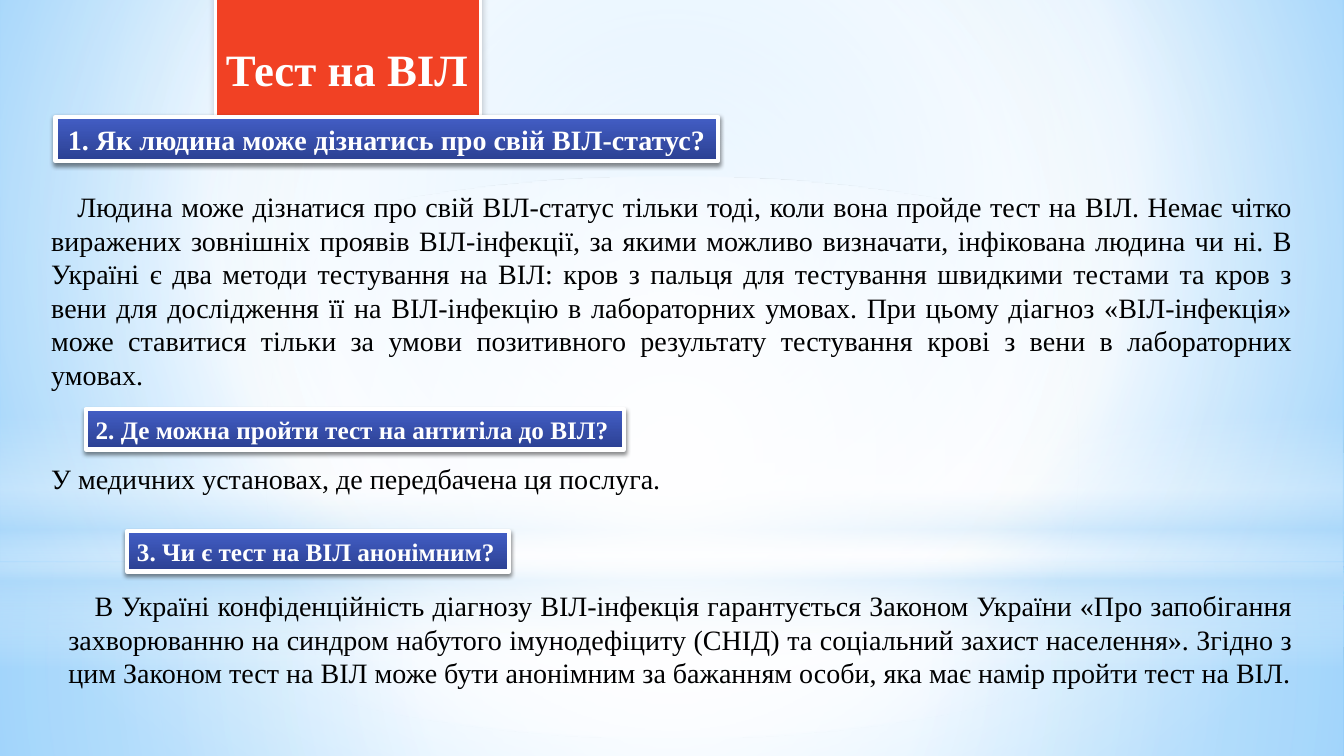
from lxml import etree
from pptx import Presentation
from pptx.dml.color import RGBColor
from pptx.enum.shapes import MSO_SHAPE
from pptx.enum.text import MSO_ANCHOR, MSO_AUTO_SIZE, PP_ALIGN
from pptx.oxml.ns import qn
from pptx.util import Inches, Pt

RECT, OVAL = MSO_SHAPE.RECTANGLE, MSO_SHAPE.OVAL
LEFT, CENTER, JUSTIFY = PP_ALIGN.LEFT, PP_ALIGN.CENTER, PP_ALIGN.JUSTIFY
FIT, MIDDLE, TOP = MSO_AUTO_SIZE.SHAPE_TO_FIT_TEXT, MSO_ANCHOR.MIDDLE, MSO_ANCHOR.TOP
TITLE_ONLY = 5
FONT = "Times New Roman"
COLORS = {
    "white": "FFFFFF", "black": "000000", "red": "F14124",
    "navy_top": "435EC5", "navy_bottom": "2B4092",
    "sky": "9ED5FF", "azure": "5BB9FF", "mist": "B4DCFA",
}


def fill_gradient(fill, element, stops, focus=None):
    """Fill with (position, color, opacity) stops: around focus, or top to bottom."""
    fill.gradient()
    gradient = element.find(".//" + qn("a:gradFill"))
    for child in list(gradient):
        gradient.remove(child)
    stop_list = etree.SubElement(gradient, qn("a:gsLst"))
    for position, color, opacity in stops:
        stop = etree.SubElement(stop_list, qn("a:gs"), pos=str(position * 1000))
        tone = etree.SubElement(stop, qn("a:srgbClr"), val=COLORS[color])
        if opacity < 100:
            etree.SubElement(tone, qn("a:alpha"), val=str(opacity * 1000))
    if focus:
        circle = etree.SubElement(gradient, qn("a:path"), path="circle")
        sides = {side: str(share * 1000) for side, share in zip("ltrb", focus)}
        etree.SubElement(circle, qn("a:fillToRect"), **sides)
    else:
        etree.SubElement(gradient, qn("a:lin"), ang="5400000", scaled="0")


def write(box, text, size=20, color="black", bold=False, align=LEFT,
          anchor=TOP, wrap=True, indent=0):
    frame = box.text_frame
    frame.word_wrap = wrap
    frame.auto_size = FIT
    frame.vertical_anchor = anchor
    para = frame.paragraphs[0]
    para.alignment = align
    if indent:
        para._p.get_or_add_pPr().set("indent", str(Inches(indent)))
    span = para.add_run()
    span.text = text
    span.font.name = FONT
    span.font.size = Pt(size)
    span.font.bold = bold
    span.font.color.rgb = RGBColor.from_string(COLORS[color])


deck = Presentation()
deck.slide_width, deck.slide_height = Inches(13.33), Inches(7.5)
page = deck.slides.add_slide(deck.slide_layouts[TITLE_ONLY])

# Background and its soft light bands
fill_gradient(page.background.fill, page.element,
              [(0, "sky", 100), (60, "white", 100), (100, "azure", 100)],
              focus=(20, 10, 20, 60))
middle = (50, 50, 50, 50)
bands = [
    (RECT, 5.58, 1.92, middle,
     [(0, "white", 91), (37, "white", 76), (100, "mist", 79)]),
    (RECT, 0, 5.58, middle,
     [(0, "white", 89), (48, "white", 62), (100, "mist", 79)]),
    (RECT, 4.12, 2.5, None,
     [(0, "white", 0), (29, "white", 30), (45, "mist", 40),
      (55, "white", 26), (65, "mist", 60), (100, "white", 0)]),
    (OVAL, 1.75, 5.58, middle, [(0, "white", 100), (56, "white", 0)]),
]
for kind, top, height, focus, stops in bands:
    band = page.shapes.add_shape(kind, 0, Inches(top), deck.slide_width, Inches(height))
    band.shadow.inherit = False
    band.line.fill.background()
    fill_gradient(band.fill, band.element, stops, focus)

# Title and question labels: place, size, alignment, border, shadow
title = page.shapes.title
title.element.getparent().append(title.element)
title_shadow = (20, 5, 4)
label_shadow = (45, 3.1, 1.8)
labels = [
    ("Тест на ВІЛ", (2.14, 0.36, 2.63, 0.64), 32, LEFT, 2, title_shadow),
    ("1. Як людина може дізнатись про свій ВІЛ-статус?",
     (0.55, 1.16, 6.57, 0.44), 20, CENTER, 3, label_shadow),
    ("2. Де можна пройти тест на антитіла до ВІЛ?",
     (0.85, 4.06, 5.34, 0.4), 18, LEFT, 3, label_shadow),
    ("3. Чи є тест на ВІЛ анонімним?",
     (1.26, 5.27, 3.79, 0.4), 18, LEFT, 3, label_shadow),
]
for number, (text, place, size, align, border, shadow) in enumerate(labels):
    left, top, width, height = map(Inches, place)
    if number == 0:
        label = title
        label.left, label.top, label.width, label.height = left, top, width, height
        label.fill.solid()
        label.fill.fore_color.rgb = RGBColor.from_string(COLORS["red"])
    else:
        label = page.shapes.add_shape(RECT, left, top, width, height)
        fill_gradient(label.fill, label.element,
                      [(0, "navy_top", 100), (100, "navy_bottom", 100)])
    label.line.color.rgb = RGBColor.from_string(COLORS["white"])
    label.line.width = Pt(border)
    label.shadow.inherit = False
    opacity, blur, distance = shadow
    cast = etree.SubElement(label.element.find(".//" + qn("a:effectLst")),
                            qn("a:outerShdw"), blurRad=str(Pt(blur)),
                            dist=str(Pt(distance)), dir="5400000", rotWithShape="0")
    tone = etree.SubElement(cast, qn("a:srgbClr"), val=COLORS["black"])
    etree.SubElement(tone, qn("a:alpha"), val=str(opacity * 1000))
    write(label, text, size=size, color="white", bold=True, align=align,
          anchor=MIDDLE, wrap=False)

# Answers
answers = [
    ("Людина може дізнатися про свій ВІЛ-статус тільки тоді, коли вона пройде тест "
     "на ВІЛ. Немає чітко виражених зовнішніх проявів ВІЛ-інфекції, за якими можливо "
     "визначати, інфікована людина чи ні. В Україні є два методи тестування на ВІЛ: "
     "кров з пальця для тестування швидкими тестами та кров з вени для дослідження її "
     "на ВІЛ-інфекцію в лабораторних умовах. При цьому діагноз «ВІЛ-інфекція» може "
     "ставитися тільки за умови позитивного результату тестування крові з вени в "
     "лабораторних умовах.",
     (0.41, 1.83, 12.51, 2.12), JUSTIFY, 0.26),
    ("У медичних установах, де передбачена ця послуга.",
     (0.41, 4.53, 6.67, 0.44), LEFT, 0),
    ("В Україні конфіденційність діагнозу ВІЛ-інфекція гарантується Законом України "
     "«Про запобігання захворюванню на синдром набутого імунодефіциту (СНІД) та "
     "соціальний захист населення». Згідно з цим Законом тест на ВІЛ може бути "
     "анонімним за бажанням особи, яка має намір пройти тест на ВІЛ.",
     (0.58, 5.79, 12.34, 1.11), JUSTIFY, 0.26),
]
for text, place, align, indent in answers:
    box = page.shapes.add_textbox(*map(Inches, place))
    write(box, text, align=align, indent=indent)

deck.save("out.pptx")
